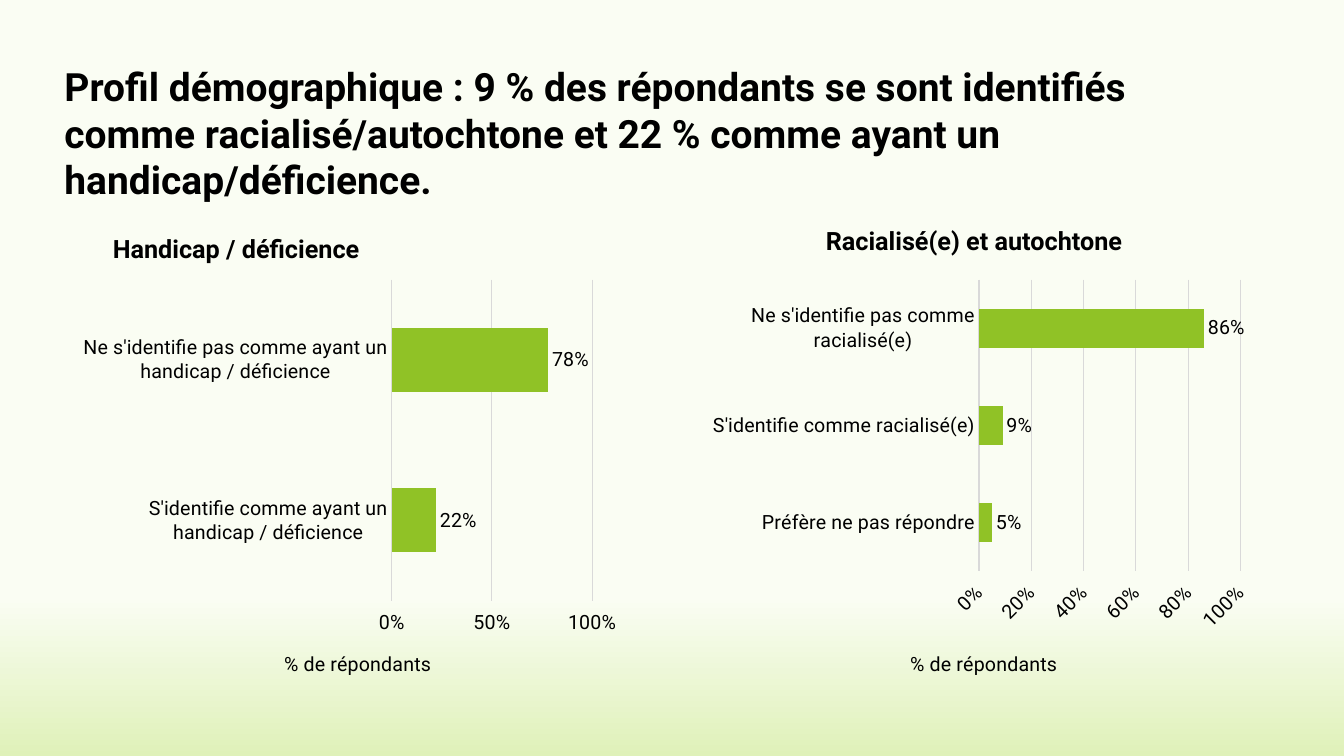
from lxml import etree
from pptx import Presentation
from pptx.chart.data import CategoryChartData
from pptx.dml.color import RGBColor
from pptx.enum.chart import XL_CHART_TYPE as ChartType
from pptx.enum.chart import XL_LABEL_POSITION as LabelPosition
from pptx.enum.chart import XL_TICK_MARK as TickMark
from pptx.enum.text import MSO_ANCHOR as Anchor
from pptx.enum.text import PP_ALIGN as Align
from pptx.oxml.ns import qn
from pptx.util import Inches, Pt

BLACK = RGBColor(0x00, 0x00, 0x00)
GREEN = RGBColor(0x90, 0xC2, 0x26)
GRID = RGBColor(0xD9, 0xD9, 0xD9)
PALE = RGBColor(0xFA, 0xFD, 0xF3)
LIME = RGBColor(0xDF, 0xF1, 0xB9)

CHART_FONT = {"name": "Roboto", "size": Pt(14), "bold": False}
HEADING_FONT = {"name": "Roboto", "size": Pt(18), "bold": True}
TITLE_FONT = {"name": "Roboto", "size": Pt(27.8), "bold": True}


def set_layout(parent, index, **values):
    """Place a chart part by fractions of the chart's size."""
    for old in parent.findall(qn("c:layout")):
        parent.remove(old)
    layout = etree.Element(qn("c:layout"))
    manual = etree.SubElement(layout, qn("c:manualLayout"))
    for key, value in values.items():
        etree.SubElement(manual, qn(f"c:{key}")).set("val", str(value))
    parent.insert(index, layout)


class SurveySlide:
    def __init__(self, presentation):
        self.slide = presentation.slides.add_slide(presentation.slide_layouts[6])

    def background(self):
        fill = self.slide.background.fill
        fill.gradient()
        fill.gradient_angle = 270
        for stop, color, position in zip(fill.gradient_stops, (PALE, LIME), (0.79, 1)):
            stop.color.rgb = color
            stop.position = position

    def style(self, font, values):
        for name, value in values.items():
            setattr(font, name, value)
        font.color.rgb = BLACK

    def text(self, content, box, font, align=Align.LEFT, anchor=Anchor.TOP):
        shape = self.slide.shapes.add_textbox(*map(Inches, box))
        frame = shape.text_frame
        frame.word_wrap = True
        frame.vertical_anchor = anchor
        paragraph = frame.paragraphs[0]
        paragraph.alignment = align
        run = paragraph.add_run()
        run.text = content
        self.style(run.font, font)

    def bar_chart(self, left, shares, plot, step, label_angle=0):
        data = CategoryChartData(number_format="0%")
        data.categories = list(shares)
        data.add_series("Series 1", list(shares.values()))
        box = map(Inches, (left, 2.69, 5.52, 4.19))
        chart = self.slide.shapes.add_chart(ChartType.BAR_CLUSTERED, *box, data).chart
        chart.has_legend = False
        chart.has_title = False
        self.style(chart.font, CHART_FONT)
        x, y, width, height = plot
        set_layout(chart._chartSpace.chart.plotArea, 0, layoutTarget="inner",
                   xMode="edge", yMode="edge", x=x, y=y, w=width, h=height)

        # Bars and their labels
        bars = chart.plots[0]
        bars.gap_width = 150
        bars.vary_by_categories = False
        fill = bars.series[0].format.fill
        fill.solid()
        fill.fore_color.rgb = GREEN
        bars.has_data_labels = True
        labels = bars.data_labels
        label_format = {"show_value": True, "number_format": "0%",
                        "number_format_is_linked": False,
                        "position": LabelPosition.OUTSIDE_END}
        for name, value in label_format.items():
            setattr(labels, name, value)
        self.style(labels.font, CHART_FONT)

        # Axes
        category_axis, value_axis = chart.category_axis, chart.value_axis
        axis_formats = {
            category_axis: {"major_tick_mark": TickMark.NONE,
                            "has_major_gridlines": False},
            value_axis: {"major_tick_mark": TickMark.OUTSIDE,
                         "has_major_gridlines": True, "minimum_scale": 0,
                         "maximum_scale": 1, "major_unit": step},
        }
        for axis, values in axis_formats.items():
            for name, value in values.items():
                setattr(axis, name, value)
            axis.minor_tick_mark = TickMark.NONE
            self.style(axis.tick_labels.font, CHART_FONT)
        for line in (category_axis.format.line, value_axis.major_gridlines.format.line):
            line.color.rgb = GRID
            line.width = Pt(0.75)
        value_axis.format.line.fill.background()
        value_axis.tick_labels.number_format = "0%"
        value_axis.tick_labels.number_format_is_linked = False
        body = value_axis._element.find(qn("c:txPr")).find(qn("a:bodyPr"))
        body.set("rot", str(label_angle * 60000))

        # Axis title
        title = value_axis.axis_title
        paragraph = title.text_frame.paragraphs[0]
        run = paragraph.add_run()
        run.text = "% de répondants"
        self.style(run.font, CHART_FONT)
        set_layout(title._element, 1, xMode="edge", yMode="edge", x=0.37, y=0.89)


def main():
    presentation = Presentation()
    presentation.slide_width = Inches(13.33)
    presentation.slide_height = Inches(7.5)
    survey = SurveySlide(presentation)
    survey.background()

    # Title and chart headings
    survey.text("Profil démographique : 9 % des répondants se sont identifiés comme "
                "racialisé/autochtone et 22 % comme ayant un handicap/déficience.",
                (0.54, 0.57, 11.99, 1.44), TITLE_FONT)
    survey.text("Handicap / déficience", (1.02, 2.27, 2.99, 0.63), HEADING_FONT)
    survey.text("Racialisé(e) et autochtone", (7.22, 1.95, 4.88, 0.63), HEADING_FONT,
                Align.CENTER, Anchor.BOTTOM)

    # Charts
    survey.bar_chart(6.95, {
        "Préfère ne pas répondre": 0.05,
        "S'identifie comme racialisé(e)": 0.09,
        "Ne s'identifie pas comme racialisé(e)": 0.86,
    }, (0.5, 0.02, 0.47, 0.69), 0.2, -45)
    survey.bar_chart(0.74, {
        "S'identifie comme ayant un handicap / déficience": 0.22,
        "Ne s'identifie pas comme ayant un handicap / déficience": 0.78,
    }, (0.57, 0.02, 0.36, 0.76), 0.5)

    presentation.save("out.pptx")


if __name__ == "__main__":
    main()
